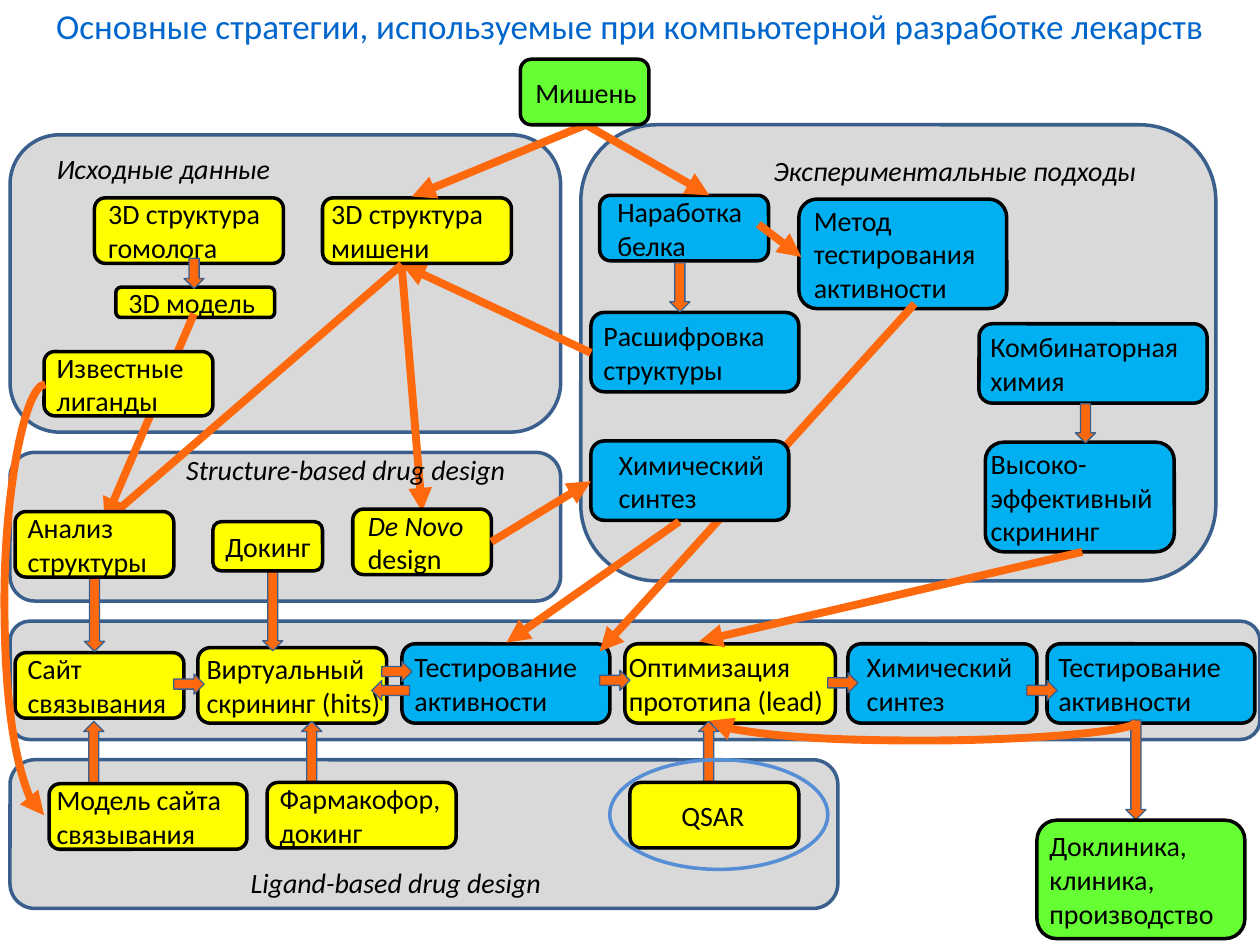
from lxml import etree
from pptx import Presentation
from pptx.dml.color import RGBColor as Rgb
from pptx.enum.shapes import MSO_CONNECTOR as Link, MSO_SHAPE as Kind
from pptx.enum.text import MSO_ANCHOR as Anchor, MSO_AUTO_SIZE as Fit, PP_ALIGN as Align
from pptx.oxml.ns import qn
from pptx.util import Inches, Pt

HUES = {
    "yellow": "FFFF00", "blue": "00B0F0", "green": "66FF33", "gray": "D9D9D9",
    "black": "000000", "navy": "3A5F8C", "orange": "FF690D", "ring": "558ED5",
    "title": "0066CC",
}
BODY = {"name": "Calibri", "size": Pt(16), "bold": False, "italic": False}
NOTE = BODY | {"italic": True}
HEAD = BODY | {"size": Pt(20)}
CORNER = 0.05  # text inset of a rounded box, as a share of its short side


def hue(name):
    return Rgb.from_string(HUES[name])


def style(font, form, color="black"):
    for key, value in form.items():
        setattr(font, key, value)
    font.color.rgb = hue(color)


def write(frame, text, form):
    frame.text = text
    for para in frame.paragraphs:
        para.alignment = Align.LEFT
        for run in para.runs:
            style(run.font, form)


class Area:
    """Draws parts relative to the corner of a box on the slide."""

    def __init__(self, slide, left, top):
        self.shapes, self.left, self.top = slide.shapes, left, top

    def spot(self, x, y):
        return Inches(self.left + x), Inches(self.top + y)

    def shape(self, kind, x, y, wide, high, fill, edge, width):
        item = self.shapes.add_shape(kind, *self.spot(x, y), Inches(wide), Inches(high))
        item.shadow.inherit = False
        if fill:
            item.fill.solid()
            item.fill.fore_color.rgb = hue(fill)
        else:
            item.fill.background()
        item.line.color.rgb = hue(edge)
        item.line.width = Pt(width)
        return item

    def box(self, text, x, y, wide, high, pad, fill):
        item = self.shape(Kind.ROUNDED_RECTANGLE, x, y, wide, high, fill, "black", 2)
        frame = item.text_frame
        frame.word_wrap, frame.vertical_anchor = True, Anchor.MIDDLE
        frame.margin_left = Inches(max(0, pad - CORNER * min(wide, high)))
        frame.margin_right = frame.margin_top = frame.margin_bottom = 0
        write(frame, text, BODY)
        return item

    def block(self, x, y, size=0.24, turn=0):
        item = self.shape(Kind.RIGHT_ARROW, x, y, size, 0.16, "orange", "navy", 0)
        item.rotation = turn

    def link(self, x1, y1, x2, y2, kind=Link.STRAIGHT):
        item = self.shapes.add_connector(kind, *self.spot(x1, y1), *self.spot(x2, y2))
        item.line.color.rgb = hue("orange")
        item.line.width = Pt(4.5)
        etree.SubElement(item.line._get_or_add_ln(), qn("a:tailEnd"), type="triangle")
        etree.SubElement(item._element.spPr, qn("a:effectLst"))
        return item

    def curve(self, x, y, high, turn, bulge):
        flat = 0.01
        item = self.link(x, y, x + flat, y + high, Link.CURVE)
        props = item._element.spPr
        props.xfrm.set("rot", str(turn * 60000))
        props.xfrm.set("flipV", "1")
        geom = props.find(qn("a:prstGeom"))
        guides = geom.find(qn("a:avLst"))
        if guides is None:
            guides = etree.SubElement(geom, qn("a:avLst"))
        ratio = round(bulge / flat * 100000)
        etree.SubElement(guides, qn("a:gd"), name="adj1", fmla=f"val {ratio}")

    def note(self, text, x, y, wide):
        item = self.shapes.add_textbox(*self.spot(x, y), Inches(wide), Inches(0.37))
        frame = item.text_frame
        frame.word_wrap, frame.auto_size = False, Fit.SHAPE_TO_FIT_TEXT
        write(frame, text, NOTE)


# Row of steps from binding site to tested lead
def steps(area):
    area.box("Сайт\nсвязывания", 0.04, 0.25, 1.34, 0.52, 0.1, "yellow")
    area.box("Виртуальный\ncкрининг (hits)", 1.49, 0.21, 1.5, 0.6, 0.07, "yellow")
    for text, x, wide, pad, fill in (
        ("Тестирование\nактивности", 3.11, 1.65, 0.1, "blue"),
        ("Оптимизация\nпрототипа (lead)", 4.88, 1.67, 0.03, "yellow"),
        ("Химический\nсинтез", 6.65, 1.5, 0.15, "blue"),
        ("Тестирование\nактивности", 8.23, 1.65, 0.09, "blue"),
    ):
        area.box(text, x, 0.18, wide, 0.63, pad, fill)
    area.block(2.87, 0.47, 0.3, 180)
    for x, y in ((1.3, 0.42), (2.95, 0.32), (4.68, 0.39), (6.49, 0.41), (8.07, 0.47)):
        area.block(x, y)
    area.block(8.54, 1.1, 0.79, 90)
    area.curve(7.24, -0.9, 3.39, 270, -0.15)


# Experimental methods
def lab(area):
    area.note("Экспериментальные подходы", 1.43, 0.18, 3.11)
    for text, *place in (
        ("Наработка\nбелка", 0.15, 0.56, 1.34, 0.52, 0.14),
        ("Расшифровка\nструктуры", 0.08, 1.49, 1.65, 0.63, 0.1),
        ("Метод\nтестирования\nактивности", 1.73, 0.59, 1.65, 0.87, 0.12),
        ("Комбинаторная\nхимия", 3.16, 1.58, 1.81, 0.63, 0.09),
        ("Высоко-\nэффективный\nскрининг", 3.21, 2.52, 1.5, 0.87, 0.04),
    ):
        area.box(text, *place, "blue")
    area.link(2.65, 1.42, 0.15, 4.18)
    area.box("Химический\nсинтез", 0.08, 2.51, 1.57, 0.63, 0.22, "blue")
    area.block(0.59, 1.21, 0.39, 90)
    area.block(3.85, 2.29, 0.31, 90)
    for ends in (
        (0.08, 1.81, -1.42, 1.11), (0.78, 3.15, -0.59, 4.11),
        (1.41, 0.79, 1.75, 1.05), (3.98, 3.39, 0.94, 4.1),
    ):
        area.link(*ends)


# Input data
def inputs(area):
    area.note("Исходные данные", 0.27, 0.08, 1.91)
    area.box("3D структура\nгомолога", 0.67, 0.5, 1.5, 0.52, 0.11, "yellow")
    area.box("3D структура\nмишени", 2.48, 0.5, 1.5, 0.52, 0.07, "yellow")
    area.box("3D модель", 0.84, 1.21, 1.26, 0.24, 0.1, "yellow")
    area.block(1.34, 1.02, 0.24, 90)
    area.link(1.46, 1.42, 0.75, 3.07)
    area.box("Известные\nлиганды", 0.27, 1.72, 1.34, 0.51, 0.1, "yellow")
    area.link(3.11, 1.03, 0.75, 3.07)
    area.link(3.11, 1.06, 3.27, 2.99)


# Structure-based design
def design(area):
    area.block(0.37, 1.2, 0.6, 90)
    area.block(1.77, 1.18, 0.63, 90)
    area.box("Анализ\nструктуры", 0.04, 0.47, 1.26, 0.52, 0.1, "yellow")
    area.box("Докинг", 1.61, 0.55, 0.87, 0.39, 0.1, "yellow")
    novo = area.box("De Novo\ndesign", 2.72, 0.45, 1.1, 0.52, 0.12, "yellow")
    novo.text_frame.paragraphs[0].runs[0].font.italic = True
    area.link(3.82, 0.71, 4.61, 0.23)
    area.note("Structure-based drug design", 1.3, -0.05, 3.03)


# Ligand-based design
def ligand(area):
    for x in (0.39, 2.12, 5.27):
        area.block(x, -0.11, 0.55, 270)
    area.box("Модель сайта\nсвязывания", 0.31, 0.19, 1.57, 0.52, 0.06, "yellow")
    area.box("Фармакофор,\nдокинг", 2.04, 0.18, 1.5, 0.52, 0.1, "yellow")
    area.box("QSAR", 4.92, 0.18, 1.34, 0.52, 0.41, "yellow")
    area.shape(Kind.OVAL, 4.76, 0, 1.73, 0.87, None, "ring", 2)
    area.curve(0.27, -2.98, 3.42, 180, 0.33)
    area.note("Ligand-based drug design", 1.81, 0.79, 2.79)


# Start and finish of the whole process
def ends(area):
    area.link(4.65, 0.99, 3.27, 1.56)
    area.link(4.65, 0.99, 5.63, 1.55)
    area.box("Мишень", 4.13, 0.47, 1.02, 0.52, 0.12, "green")
    area.box("Доклиника,\nклиника,\nпроизводство", 8.23, 6.51, 1.65, 0.94, 0.1, "green")


def head(slide):
    item = slide.shapes.title
    item.left, item.top, item.width, item.height = map(Inches, (0, -0.42, 10, 1.25))
    frame = item.text_frame
    frame.text = "Основные стратегии, используемые при компьютерной разработке лекарств"
    frame.word_wrap, frame.vertical_anchor, frame.auto_size = True, Anchor.MIDDLE, Fit.NONE
    frame.paragraphs[0].alignment = Align.CENTER
    style(frame.paragraphs[0].runs[0].font, HEAD, "title")


def main():
    deck = Presentation()
    deck.slide_width, deck.slide_height = Inches(10), Inches(7.5)
    slide = deck.slides.add_slide(deck.slide_layouts[5])
    head(slide)
    page = Area(slide, 0, 0)
    # All panels lie below the parts, as arrows cross between them
    panels = (
        (steps, 0.08, 4.93, 9.92, 0.94), (lab, 4.61, 0.99, 5.04, 3.62),
        (inputs, 0.08, 1.07, 4.37, 2.36), (design, 0.08, 3.59, 4.37, 1.18),
        (ligand, 0.08, 6.03, 6.57, 1.18),
    )
    for _, *place in panels:
        page.shape(Kind.ROUNDED_RECTANGLE, *place, "gray", "navy", 2)
    for draw, left, top, *_ in panels:
        draw(Area(slide, left, top))
    ends(page)
    deck.save("out.pptx")


if __name__ == "__main__":
    main()
